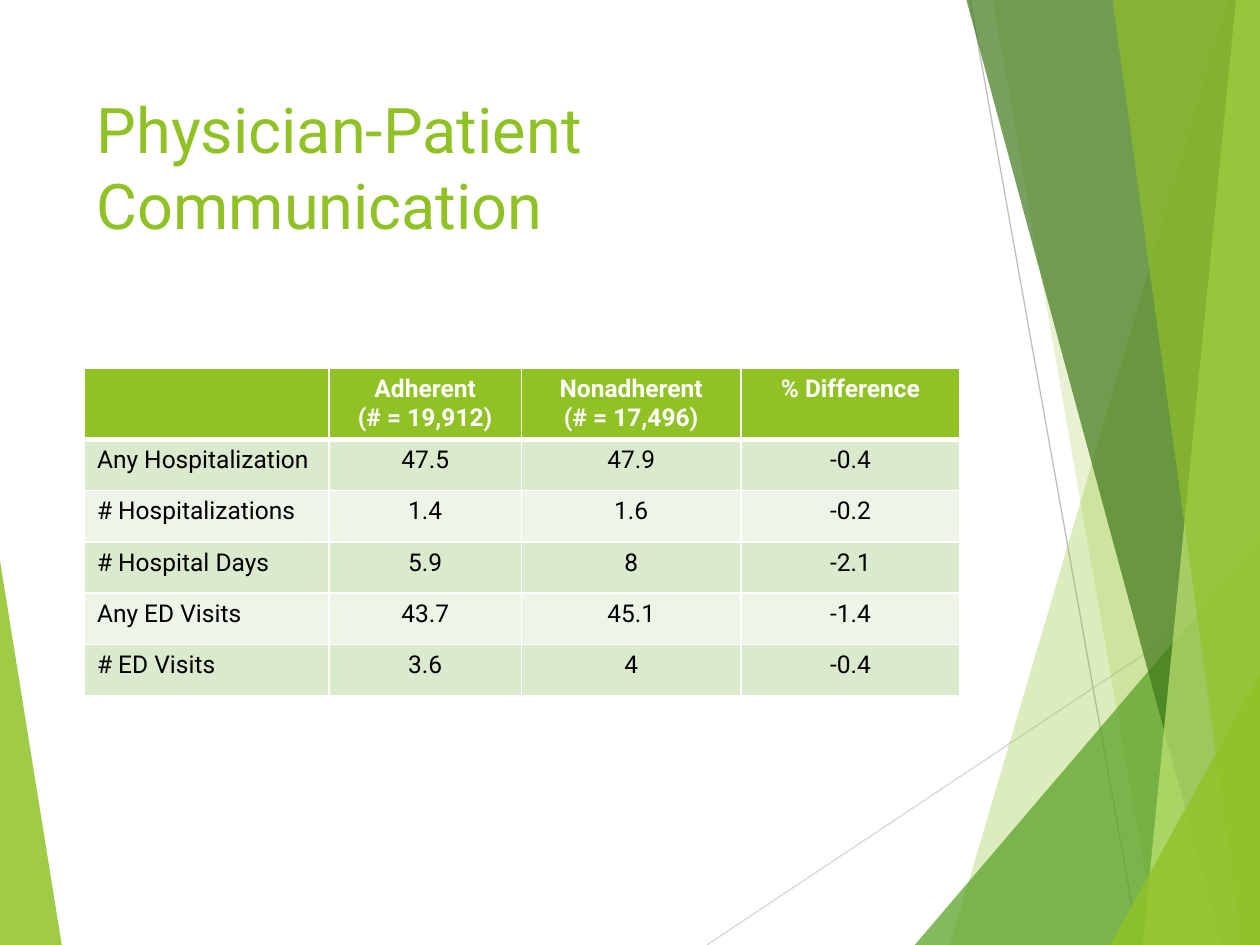
from dataclasses import dataclass

from lxml.etree import SubElement as Sub
from pptx import Presentation
from pptx.dml.color import RGBColor as Rgb
from pptx.enum.shapes import MSO_CONNECTOR as Link
from pptx.enum.text import MSO_ANCHOR as Anchor, PP_ALIGN as Align
from pptx.oxml import parse_xml
from pptx.oxml.ns import nsdecls, qn
from pptx.util import Inches, Pt


@dataclass(frozen=True)
class Theme:
    font: str = "Roboto"
    title: int = 36
    body: int = 14
    lime: str = "90C226"
    leaf: str = "54A021"
    moss: str = "3F7819"
    pale: str = "C0E474"
    white: str = "FFFFFF"
    black: str = "000000"
    mist: str = "D9D9D9"
    gray: str = "BFBFBF"
    bands: tuple = ("DBE9CD", "EEF4E8")
    thin: float = 0.75
    rule: int = 1
    thick: int = 3


def apply(obj, vals):
    for key, val in vals.items():
        setattr(obj, key, val)


class Page:
    """One slide on a grid of 100 columns by 75 rows."""
    COLS, ROWS = 100, 75

    def __init__(self, deck, theme):
        self.theme = theme
        self.slide = deck.slides.add_slide(deck.slide_layouts[6])
        self.shapes = self.slide.shapes
        self.wide, self.high = deck.slide_width, deck.slide_height

    def x(self, col):
        return round(col * self.wide / self.COLS)

    def y(self, row):
        return round(row * self.high / self.ROWS)

    def box(self, left, top, width, height):
        return self.x(left), self.y(top), self.x(width), self.y(height)

    def shard(self, points, color, alpha):
        spots = [(self.x(c), self.y(r)) for c, r in points]
        form = self.shapes.build_freeform(*spots[0])
        form.add_line_segments(spots[1:], close=True)
        shape = form.convert_to_shape()
        shape.shadow.inherit = False
        shape.fill.solid()
        shape.fill.fore_color.rgb = Rgb.from_string(color)
        shape.line.fill.background()
        tint = shape._element.spPr.find(qn("a:solidFill"))[0]
        Sub(tint, qn("a:alpha"), val=str(alpha * 1000))

    def line(self, start, end, color):
        wire = self.shapes.add_connector(
            Link.STRAIGHT, self.x(start[0]), self.y(start[1]),
            self.x(end[0]), self.y(end[1]))
        wire.line.width = Pt(self.theme.thin)
        wire.line.color.rgb = Rgb.from_string(color)
        Sub(wire._element.spPr, qn("a:effectLst"))

    def label(self, frame, text, size, color, bold=False, align=Align.LEFT):
        frame.text = text
        for para in frame.paragraphs:
            para.alignment = align
            for item in (para, *para.runs):
                apply(item.font, {"name": self.theme.font, "size": Pt(size),
                                  "bold": bold})
                item.font.color.rgb = Rgb.from_string(color)

    def title(self, text, area):
        frame = self.shapes.add_textbox(*self.box(*area)).text_frame
        apply(frame, {"word_wrap": True, "vertical_anchor": Anchor.TOP})
        self.label(frame, text, self.theme.title, self.theme.lime)

    def edge(self, cell, sides):
        props = cell._tc.get_or_add_tcPr()
        for spot, (side, width) in enumerate(sides.items()):
            props.insert(spot, parse_xml(
                f'<a:{side} {nsdecls("a")} w="{Pt(width)}"><a:solidFill>'
                f'<a:srgbClr val="{self.theme.white}"/></a:solidFill></a:{side}>'))

    def table(self, rows, spot, widths, heights):
        look = self.theme
        area = self.box(*spot, sum(widths), sum(heights))
        grid = self.shapes.add_table(len(rows), len(widths), *area).table
        apply(grid, {"first_row": False, "horz_banding": False})
        for col, width in zip(grid.columns, widths):
            col.width = self.x(width)
        for row, height in zip(grid.rows, heights):
            row.height = self.y(height)
        for r, row in enumerate(rows):
            head = r == 0
            fill = look.lime if head else look.bands[(r - 1) % 2]
            ink = look.white if head else look.black
            for c, text in enumerate(row):
                cell = grid.cell(r, c)
                cell.fill.solid()
                cell.fill.fore_color.rgb = Rgb.from_string(fill)
                self.label(cell.text_frame, text, look.body, ink, head,
                           Align.CENTER if c else Align.LEFT)
                self.edge(cell, {
                    "lnL": look.rule, "lnR": look.rule,
                    "lnT": look.thick if r == 1 else look.rule,
                    "lnB": look.thick if head else look.rule})


def main():
    deck = Presentation()
    apply(deck, {"slide_width": Inches(10), "slide_height": Inches(7.5)})
    theme = Theme()
    page = Page(deck, theme)
    right, base = page.COLS, page.ROWS

    # Left wedge and fine lines
    page.shard([(0, 44.5), (4.9, base), (0, base)], theme.lime, 85)
    page.line((56.1, base), (right, 45.8), theme.mist)
    page.line((77, 0), (90.4, base), theme.gray)

    # Right shards reaching the slide's edge: top x, bottom x
    def band(top, foot, color, alpha):
        page.shard([(top, 0), (foot, base), (right, base), (right, 0)],
                   color, alpha)

    # Corner shards: bottom x, height where they meet the edge
    def corner(foot, rise, color, alpha):
        page.shard([(foot, base), (right, rise), (right, base)], color, alpha)

    band(97.5, 75.4, theme.lime, 30)
    band(78.8, 91.9, theme.lime, 20)
    corner(72.6, 42.9, theme.leaf, 72)
    band(76.7, 97, theme.moss, 70)
    band(98.1, 90.7, theme.pale, 70)
    band(88.3, 98.6, theme.lime, 65)
    corner(88.1, 53.5, theme.lime, 80)

    # Title and table
    page.title("Physician-Patient Communication", (6.7, 6.7, 69.4, 14.4))
    rows = [
        ("", "Adherent\n(# = 19,912)", "Nonadherent\n(# = 17,496)",
         "% Difference"),
        ("Any Hospitalization", "47.5", "47.9", "-0.4"),
        ("# Hospitalizations", "1.4", "1.6", "-0.2"),
        ("# Hospital Days", "5.9", "8", "-2.1"),
        ("Any ED Visits", "43.7", "45.1", "-1.4"),
        ("# ED Visits", "3.6", "4", "-0.4"),
    ]
    page.table(rows, (6.7, 29.2), (19.4, 15.3, 17.4, 17.4),
               [5.4] + [4.07] * 5)
    deck.save("out.pptx")


if __name__ == "__main__":
    main()
